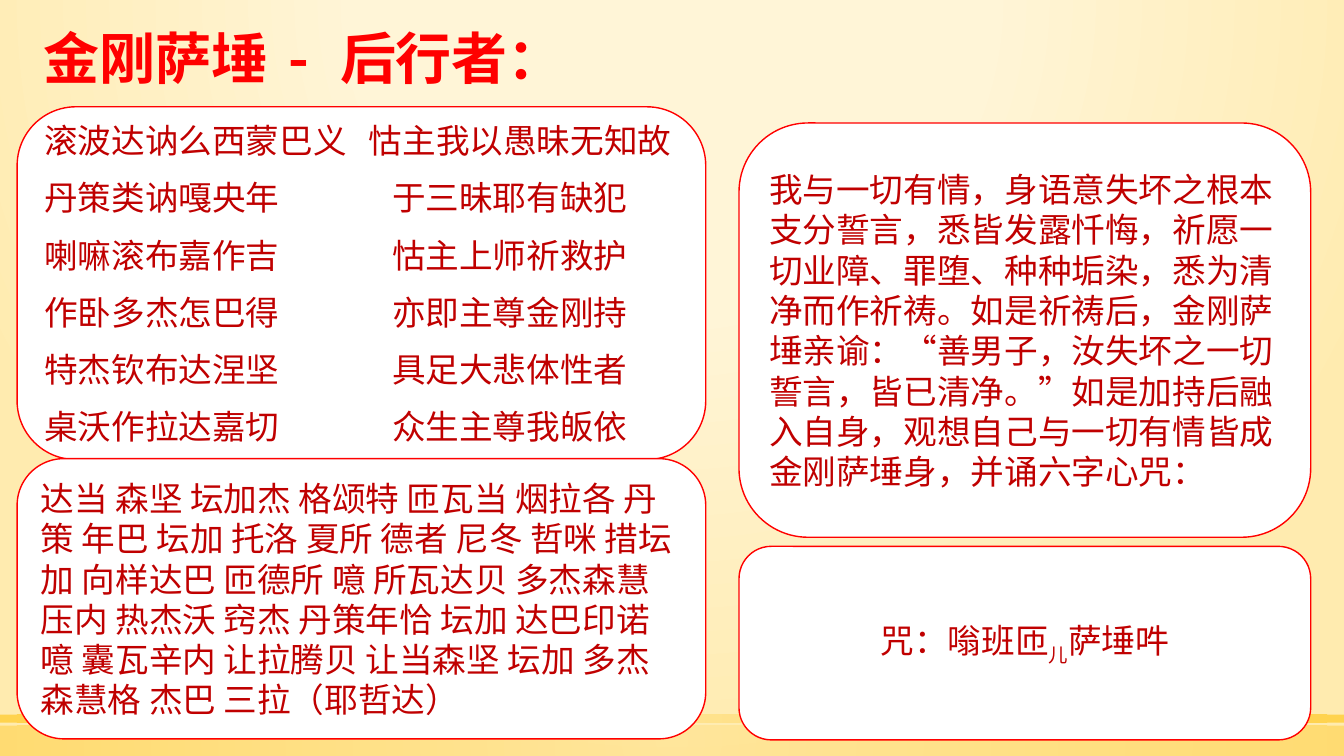
from dataclasses import dataclass

import pptx
import pptx.dml.color
import pptx.enum.shapes
import pptx.enum.text
import pptx.oxml
import pptx.oxml.ns
import pptx.util
from pptx.util import Inches

FONT = "Noto Sans CJK SC"
RED = "FF0000"
DARK_RED = "C00000"
WHITE = "FFFFFF"
ALIGN = pptx.enum.text.PP_ALIGN
ANCHOR = pptx.enum.text.MSO_ANCHOR
SHAPE = pptx.enum.shapes.MSO_SHAPE
qn = pptx.oxml.ns.qn


@dataclass
class Box:
    left: float
    top: float
    width: float
    height: float


@dataclass
class Piece:
    text: str
    baseline: int = 0
    spacing: int = 0


@dataclass
class Line:
    pieces: list[Piece]
    tab: float = 0
    space_before: float = 0


@dataclass
class Panel:
    box: Box
    lines: list[Line]
    align: ALIGN = ALIGN.LEFT


@dataclass
class Stop:
    position: int
    color: str
    opacity: int = 100


@dataclass
class Band:
    top: float
    height: float
    opacity: int


VERSES = [
    ("滚波达讷么西蒙巴义", "怙主我以愚昧无知故"),
    ("丹策类讷嘎央年", "于三昧耶有缺犯"),
    ("喇嘛滚布嘉作吉", "怙主上师祈救护"),
    ("作卧多杰怎巴得", "亦即主尊金刚持"),
    ("特杰钦布达涅坚", "具足大悲体性者"),
    ("桌沃作拉达嘉切", "众生主尊我皈依"),
]
MANTRA = (
    "达当 森坚 坛加杰 格颂特 匝瓦当 烟拉各 丹策 年巴 坛加 托洛 夏所 德者 尼冬 哲咪 "
    "措坛加 向样达巴 匝德所 噫 所瓦达贝 多杰森慧 压内 热杰沃 窍杰 丹策年恰 坛加 "
    "达巴印诺 噫 囊瓦辛内 让拉腾贝 让当森坚 坛加 多杰森慧格 杰巴 三拉（耶哲达）"
)
PRAYER = (
    "我与一切有情，身语意失坏之根本支分誓言，悉皆发露忏悔，祈愿一切业障、罪堕、种种垢染，"
    "悉为清净而作祈祷。如是祈祷后，金刚萨埵亲谕：“善男子，汝失坏之一切誓言，皆已清净。”"
    "如是加持后融入自身，观想自己与一切有情皆成金刚萨埵身，并诵六字心咒："
)

VERSE_LINES = [
    Line([Piece(f"{left}\t{right}")], tab=3.45 if index else 3.22, space_before=12 if index else 0)
    for index, (left, right) in enumerate(VERSES)
]
PANELS = [
    Panel(Box(0.17, 1.06, 6.83, 3.5), VERSE_LINES),
    Panel(Box(0.17, 4.55, 6.83, 2.78), [Line([Piece(MANTRA)])]),
    Panel(Box(7.33, 1.22, 5.67, 4.11), [Line([Piece(PRAYER)])]),
    Panel(
        Box(7.33, 5.42, 5.67, 1.92),
        [Line([Piece("咒：嗡班匝"), Piece("儿", baseline=-25), Piece("萨埵吽")])],
        ALIGN.CENTER,
    ),
]
BANDS = [Band(7.2, 0.3, 50), Band(7.09, 0.08, 80)]
TITLE = Line([Piece("金刚萨埵"), Piece(" - ", spacing=640), Piece("后行者：")])


def color(value: str) -> pptx.dml.color.RGBColor:
    return pptx.dml.color.RGBColor.from_string(value)


def lengths(box: Box) -> list[pptx.util.Length]:
    return [Inches(value) for value in (box.left, box.top, box.width, box.height)]


def apply_circle_gradient(properties, stops: list[Stop], top: int, bottom: int) -> None:
    stop_xml = "".join(
        f'<a:gs pos="{stop.position * 1000}"><a:srgbClr val="{stop.color}">'
        f'<a:alpha val="{stop.opacity * 1000}"/></a:srgbClr></a:gs>'
        for stop in stops
    )
    gradient = pptx.oxml.parse_xml(
        f'<a:gradFill {pptx.oxml.ns.nsdecls("a")} rotWithShape="1"><a:gsLst>{stop_xml}</a:gsLst>'
        f'<a:path path="circle"><a:fillToRect l="50000" t="{top * 1000}" '
        f'r="50000" b="{bottom * 1000}"/></a:path></a:gradFill>'
    )
    properties.replace(properties.find(qn("a:solidFill")), gradient)


def add_background(slide) -> None:
    slide.background.fill.solid()
    slide.background.fill.fore_color.rgb = color("FFF5D7")
    stops = [Stop(0, "FFF5D7", 59), Stop(40, "FFF5D7", 66), Stop(100, "FFEBAF")]
    apply_circle_gradient(slide.element.find(".//" + qn("p:bgPr")), stops, -80, 180)


def add_band(slide, band: Band) -> None:
    shape = slide.shapes.add_shape(SHAPE.RECTANGLE, *lengths(Box(0, band.top, 13.33, band.height)))
    shape.shadow.inherit = False
    shape.line.fill.background()
    shape.fill.solid()
    stops = [Stop(0, "FFE186", band.opacity), Stop(100, "FFCD36", band.opacity)]
    apply_circle_gradient(shape.element.spPr, stops, 50, 50)


def write_line(paragraph, line: Line, size: float, text_color: str, bold: bool = False) -> None:
    paragraph.space_before = pptx.util.Pt(line.space_before)
    if line.tab:
        tabs = pptx.oxml.parse_xml(
            f'<a:tabLst {pptx.oxml.ns.nsdecls("a")}><a:tab pos="{Inches(line.tab)}" algn="l"/></a:tabLst>'
        )
        paragraph._p.get_or_add_pPr().append(tabs)
    for piece in line.pieces:
        run = paragraph.add_run()
        run.text = piece.text
        run.font.size = pptx.util.Pt(size)
        run.font.bold = bold
        run.font.color.rgb = color(text_color)
        run.font.name = FONT
        properties = run._r.get_or_add_rPr()
        properties.append(
            pptx.oxml.parse_xml(f'<a:ea {pptx.oxml.ns.nsdecls("a")} typeface="{FONT}"/>')
        )
        if piece.baseline:
            properties.set("baseline", str(piece.baseline * 1000))
        if piece.spacing:
            properties.set("spc", str(piece.spacing))


def add_title(slide) -> None:
    shape = slide.shapes.add_textbox(*lengths(Box(0.33, 0.25, 6.83, 0.71)))
    text_frame = shape.text_frame
    text_frame.word_wrap = True
    text_frame.vertical_anchor = ANCHOR.BOTTOM
    paragraph = text_frame.paragraphs[0]
    paragraph.line_spacing = 0.9
    write_line(paragraph, TITLE, 40, RED, bold=True)


def add_panel(slide, panel: Panel) -> None:
    shape = slide.shapes.add_shape(SHAPE.ROUNDED_RECTANGLE, *lengths(panel.box))
    shape.shadow.inherit = False
    shape.fill.solid()
    shape.fill.fore_color.rgb = color(WHITE)
    shape.line.color.rgb = color(RED)
    shape.line.width = pptx.util.Pt(1)
    text_frame = shape.text_frame
    text_frame.word_wrap = True
    text_frame.vertical_anchor = ANCHOR.MIDDLE
    for index, line in enumerate(panel.lines):
        paragraph = text_frame.add_paragraph() if index else text_frame.paragraphs[0]
        paragraph.alignment = panel.align
        write_line(paragraph, line, 24, DARK_RED)


def main() -> None:
    presentation = pptx.Presentation()
    presentation.slide_width = Inches(13.33)
    presentation.slide_height = Inches(7.5)
    slide = presentation.slides.add_slide(presentation.slide_layouts[6])
    add_background(slide)
    for band in BANDS:
        add_band(slide, band)
    add_title(slide)
    for panel in PANELS:
        add_panel(slide, panel)
    presentation.save("out.pptx")


if __name__ == "__main__":
    main()
